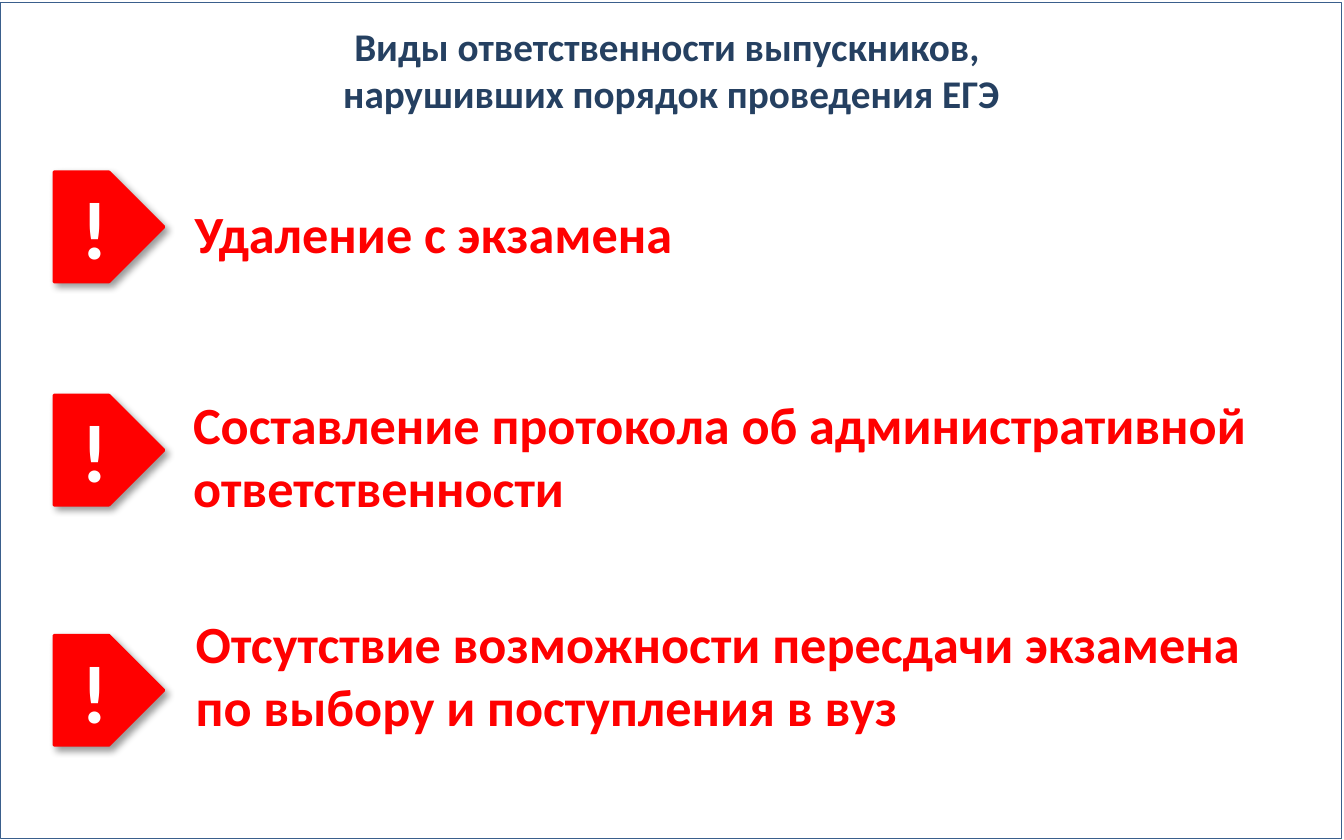
from lxml.etree import SubElement
from pptx import Presentation
from pptx.dml.color import RGBColor
from pptx.enum.shapes import MSO_SHAPE as Shape
from pptx.enum.text import MSO_ANCHOR as Anchor, MSO_AUTO_SIZE as Fit, PP_ALIGN as Align
from pptx.oxml.ns import qn
from pptx.util import Cm, Pt

TITLE = "Виды ответственности выпускников, \vнарушивших порядок проведения ЕГЭ"
# text, its box (left, top, width, height) and the top of its marker, in cm
ITEMS = [
    ("Удаление с экзамена", (3.43, 3.68, 9.65, 1.45), 3.25),
    ("Составление протокола об административной ответственности",
     (3.4, 7.29, 20.78, 2.64), 7.47),
    ("Отсутствие возможности пересдачи экзамена по выбору и поступления в вуз",
     (3.45, 11.43, 21.26, 2.64), 12.01),
]
NAVY, RED, WHITE, EDGE = "254061", "FF0000", "FFFFFF", "3A5F8C"
LEFT, SIDE = 1.02, 2.08


def color(code):
    return RGBColor.from_string(code)


def style(para, size, code, align):
    para.alignment = align
    font = para.font
    font.name, font.size, font.bold = "Calibri", Pt(size), True
    font.color.rgb = color(code)


def shade(shape):
    """Cast a soft black shadow down and to the right."""
    shape.shadow.inherit = False
    effects = shape._element.spPr.find(qn("a:effectLst"))
    outer = SubElement(effects, qn("a:outerShdw"), blurRad=str(Pt(4)),
                       dist=str(Pt(3)), dir="2700000", algn="tl", rotWithShape="0")
    black = SubElement(outer, qn("a:srgbClr"), val="000000")
    SubElement(black, qn("a:alpha"), val="40000")


def add_frame(slide):
    frame = slide.shapes.add_shape(Shape.RECTANGLE, 0, Cm(0.05), Cm(25.35), Cm(15.8))
    frame.shadow.inherit = False
    frame.fill.background()
    frame.line.color.rgb = color(EDGE)
    frame.line.width = Pt(0.25)


def add_title(slide):
    title = slide.shapes.title
    title.left, title.top, title.width, title.height = map(Cm, (2.49, 0, 20.4, 2.62))
    frame = title.text_frame
    frame.margin_left = frame.margin_right = Cm(0.08)
    frame.margin_top = frame.margin_bottom = Cm(0.08)
    frame.auto_size = Fit.NONE
    frame.vertical_anchor = Anchor.MIDDLE
    frame.text = TITLE
    style(frame.paragraphs[0], 21, NAVY, Align.CENTER)


def add_marker(slide, top):
    mark = slide.shapes.add_shape(Shape.PENTAGON, *map(Cm, (LEFT, top, SIDE, SIDE)))
    mark.fill.solid()
    mark.fill.fore_color.rgb = color(RED)
    mark.line.color.rgb = color(RED)
    mark.line.width = Pt(1.5)
    shade(mark)
    frame = mark.text_frame
    frame.vertical_anchor = Anchor.MIDDLE
    frame.text = "!"
    style(frame.paragraphs[0], 44, WHITE, Align.CENTER)


def add_item(slide, text, box):
    frame = slide.shapes.add_textbox(*map(Cm, box)).text_frame
    frame.word_wrap = True
    frame.auto_size = Fit.SHAPE_TO_FIT_TEXT
    frame.text = text
    style(frame.paragraphs[0], 28, RED, Align.LEFT)


def main():
    deck = Presentation()
    deck.slide_width, deck.slide_height = Cm(25.4), Cm(15.88)
    slide = deck.slides.add_slide(deck.slide_layouts[5])
    add_frame(slide)
    add_title(slide)
    for text, box, top in ITEMS:
        add_marker(slide, top)
        add_item(slide, text, box)
    deck.save("out.pptx")


if __name__ == "__main__":
    main()
